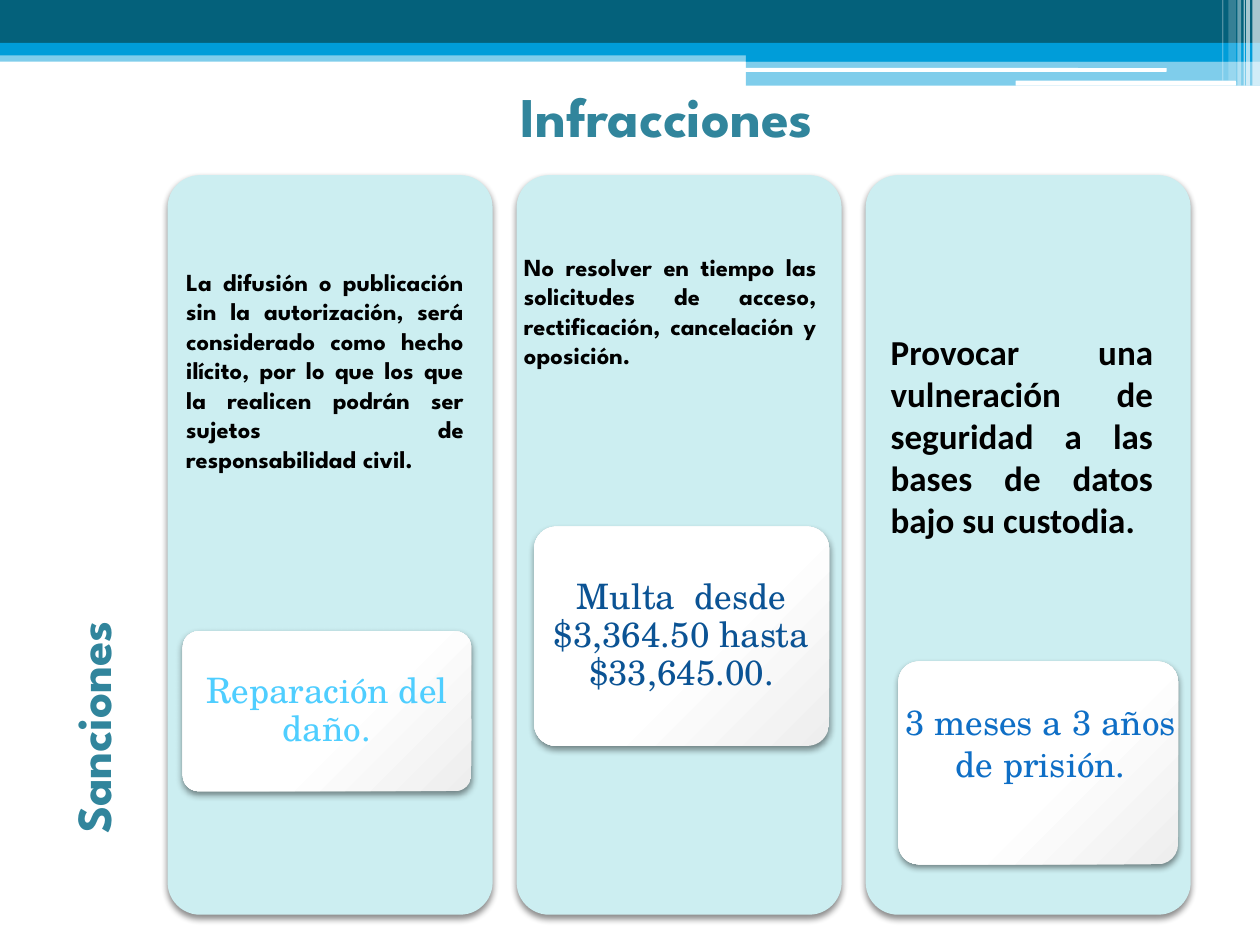
from dataclasses import dataclass

from lxml.etree import SubElement
from pptx import Presentation
from pptx.dml.color import RGBColor
from pptx.enum.shapes import MSO_SHAPE as Preset
from pptx.enum.text import MSO_ANCHOR as Anchor, PP_ALIGN as Align
from pptx.oxml import parse_xml
from pptx.oxml.ns import nsdecls, qn
from pptx.util import Inches, Pt

WHITE = RGBColor(0xFF, 0xFF, 0xFF)
BLACK = RGBColor(0x00, 0x00, 0x00)
DARK_TEAL = RGBColor(0x04, 0x61, 0x7B)
BRIGHT_BLUE = RGBColor(0x00, 0x9D, 0xD9)
HEADING_TEAL = RGBColor(0x31, 0x85, 0x9C)
PALE_TEAL = RGBColor(0xCC, 0xEE, 0xF1)
SKY = RGBColor(0x4F, 0xCE, 0xFF)
NAVY = RGBColor(0x0B, 0x53, 0x94)
BLUE = RGBColor(0x0F, 0x6F, 0xC6)

SPARTAN, SCHOLA, CALIBRI = "League Spartan", "TeX Gyre Schola", "Calibri"
SLIDE_W, SLIDE_H = 10, 7.5
COLUMN_LEFT, COLUMN_TOP, COLUMN_STEP = 1.33, 1.39, 2.77
COLUMN_W, COLUMN_H = 2.58, 5.87
CARD_INSET = 0.05
CARD_GRADIENT = f"""<a:gradFill {nsdecls('a')} rotWithShape="1"><a:gsLst>
<a:gs pos="0"><a:srgbClr val="FFFFFF"/></a:gs>
<a:gs pos="55000"><a:srgbClr val="FFFFFF"/></a:gs>
<a:gs pos="100000"><a:srgbClr val="EEEEEE"/></a:gs></a:gsLst>
<a:path path="circle"><a:fillToRect l="-40000" t="-90000" r="140000" b="190000"/></a:path>
</a:gradFill>"""


@dataclass(frozen=True)
class Box:
    left: float
    top: float
    width: float
    height: float

    def emu(self):
        return [Inches(v) for v in (self.left, self.top, self.width, self.height)]

    def inset(self, gap):
        return Box(self.left + gap, self.top + gap,
                   self.width - 2 * gap, self.height - 2 * gap)


@dataclass(frozen=True)
class Band:
    box: Box
    color: RGBColor
    opacity: int = 100
    preset: Preset = Preset.RECTANGLE


@dataclass(frozen=True)
class Style:
    font: str
    size: int
    color: RGBColor
    bold: bool = False
    align: Align = Align.CENTER
    anchor: Anchor = Anchor.TOP
    line_spacing: float = 1.0


@dataclass(frozen=True)
class Case:
    """An offence and its sanction; boxes are measured from the column's corner."""
    offence: str
    offence_box: Box
    offence_style: Style
    sanction: str
    card_box: Box
    sanction_color: RGBColor
    sanction_box: Box | None = None
    sanction_spacing: float = 0.9


HEADING = Style(SPARTAN, 32, HEADING_TEAL, bold=True)
SIDE_HEADING = Style(SPARTAN, 28, HEADING_TEAL, bold=True)
OFFENCE = Style(SPARTAN, 14, BLACK, bold=True, align=Align.JUSTIFY)
LARGE_OFFENCE = Style(CALIBRI, 20, BLACK, bold=True, align=Align.JUSTIFY)

STRIPE_TOP = 5.92
BANDS = [
    Band(Box(0, 0.4, SLIDE_W, 0.09), BRIGHT_BLUE, 50),
    Band(Box(0, 0, SLIDE_W, 0.34), DARK_TEAL),
    Band(Box(0, 0.34, SLIDE_W, 0.1), BRIGHT_BLUE),
    Band(Box(STRIPE_TOP, 0.39, SLIDE_W - STRIPE_TOP, 0.1), BRIGHT_BLUE),
    Band(Box(STRIPE_TOP, 0.48, SLIDE_W - STRIPE_TOP, 0.2), BRIGHT_BLUE, 50),
    Band(Box(5.91, 0.54, 3.35, 0.03), WHITE, preset=Preset.ROUNDED_RECTANGLE),
    Band(Box(8.06, 0.64, 1.75, 0.04), WHITE, preset=Preset.ROUNDED_RECTANGLE),
] + [
    Band(Box(left, 0, width, height), WHITE, opacity)
    for left, width, height, opacity in [
        (9.94, 0.06, 0.68, 65), (9.89, 0.03, 0.68, 65), (9.87, 0.01, 0.68, 60),
        (9.82, 0.03, 0.68, 40), (9.75, 0.06, 0.64, 20), (9.7, 0.01, 0.64, 30)]
]

CASES = [
    Case("La difusión o publicación sin la autorización, será considerado como "
         "hecho ilícito, por lo que los que la realicen podrán ser sujetos de "
         "responsabilidad civil.",
         Box(0.05, 0.68, 2.4, 1.99), OFFENCE,
         "Reparación del daño.", Box(0.12, 3.62, 2.29, 1.27), SKY),
    Case("No resolver en tiempo las solicitudes de acceso, rectificación, "
         "cancelación y oposición.",
         Box(-0.04, 0.56, 2.52, 1.28), OFFENCE,
         "Multa  desde $3,364.50 hasta $33,645.00.",
         Box(0.14, 2.79, 2.34, 1.74), NAVY),
    Case("Provocar una vulneración de seguridad a las bases de datos bajo su "
         "custodia.",
         Box(0.1, 1.18, 2.28, 1.78), LARGE_OFFENCE,
         "3 meses a 3 años de prisión.", Box(0.26, 3.86, 2.22, 1.61), BLUE,
         Box(0.1, 4.12, 2.58, 0.77), 1.0),
]


def add_band(shapes, band: Band):
    shape = shapes.add_shape(band.preset, *band.box.emu())
    shape.shadow.inherit = False
    shape.fill.solid()
    shape.fill.fore_color.rgb = band.color
    shape.line.fill.background()
    if band.opacity < 100:
        color = shape._element.spPr.find(qn("a:solidFill")).find(qn("a:srgbClr"))
        SubElement(color, qn("a:alpha"), val=str(band.opacity * 1000))
    return shape


def add_panel(shapes, box: Box, color: RGBColor):
    """Add a rounded panel with a soft shadow below it."""
    panel = add_band(shapes, Band(box, color, preset=Preset.ROUNDED_RECTANGLE))
    panel.adjustments[0] = 0.1
    effects = panel._element.spPr.find(qn("a:effectLst"))
    shadow = SubElement(effects, qn("a:outerShdw"), blurRad=str(Pt(4)),
                        dist=str(Pt(2)), dir="5400000", rotWithShape="0")
    shade = SubElement(shadow, qn("a:srgbClr"), val=str(BLACK))
    SubElement(shade, qn("a:alpha"), val="45000")
    return panel


def add_card(shapes, box: Box):
    properties = add_panel(shapes, box, WHITE)._element.spPr
    properties.replace(properties.find(qn("a:solidFill")), parse_xml(CARD_GRADIENT))


def add_text(shapes, text: str, box: Box, style: Style, margins=(0.1, 0.05)):
    label = shapes.add_textbox(*box.emu())
    frame = label.text_frame
    frame.word_wrap = True
    frame.vertical_anchor = style.anchor
    frame.margin_left = frame.margin_right = Inches(margins[0])
    frame.margin_top = frame.margin_bottom = Inches(margins[1])
    frame.text = text
    paragraph = frame.paragraphs[0]
    paragraph.alignment = style.align
    paragraph.line_spacing = style.line_spacing
    font = paragraph.runs[0].font
    font.name, font.size, font.bold = style.font, Pt(style.size), style.bold
    font.color.rgb = style.color
    return label


def add_case(shapes, case: Case, column: int):
    left = COLUMN_LEFT + column * COLUMN_STEP

    def place(box: Box) -> Box:
        return Box(left + box.left, COLUMN_TOP + box.top, box.width, box.height)

    add_panel(shapes, place(Box(0, 0, COLUMN_W, COLUMN_H)), PALE_TEAL)
    add_card(shapes, place(case.card_box))
    style = Style(SCHOLA, 20, case.sanction_color, anchor=Anchor.MIDDLE,
                  line_spacing=case.sanction_spacing)
    sanction_box = case.sanction_box or case.card_box.inset(CARD_INSET)
    margins = (0.1, 0.05) if case.sanction_box else (0.06, 0.04)
    add_text(shapes, case.sanction, place(sanction_box), style, margins)
    add_text(shapes, case.offence, place(case.offence_box), case.offence_style)


def main():
    deck = Presentation()
    deck.slide_width, deck.slide_height = Inches(SLIDE_W), Inches(SLIDE_H)
    shapes = deck.slides.add_slide(deck.slide_layouts[6]).shapes
    for band in BANDS:
        add_band(shapes, band)
    for column, case in enumerate(CASES):
        add_case(shapes, case, column)
    add_text(shapes, "Infracciones", Box(2.84, 0.6, 4.91, 0.64), HEADING)
    sanctions = add_text(shapes, "Sanciones", Box(-0.47, 5.49, 2.41, 0.57), SIDE_HEADING)
    sanctions.rotation = 270
    deck.save("out.pptx")


if __name__ == "__main__":
    main()
